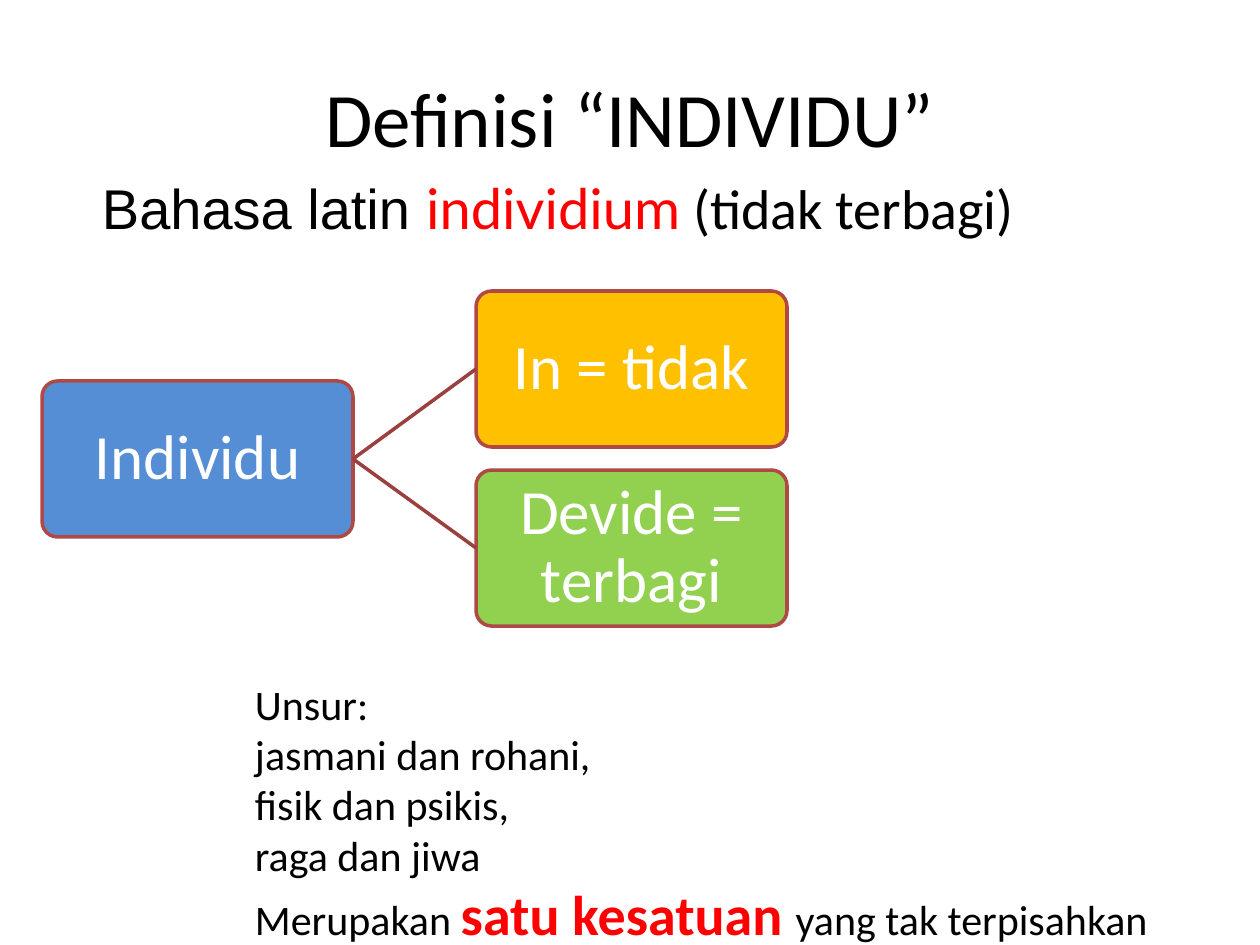
import pptx
import pptx.dml.color
import pptx.enum.shapes
import pptx.enum.text
import pptx.oxml
import pptx.util

SCALE = 914400 / 126
ALIGN = pptx.enum.text.PP_ALIGN
ANCHOR = pptx.enum.text.MSO_ANCHOR
BASE = {"name": "Calibri", "size": 24, "color": "000000", "bold": False}
LABEL = BASE | {"size": 36, "color": "FFFFFF"}
LEAD = BASE | {"size": 32}


def px(*sizes):
    """Turn pixel lengths into EMU."""
    return [pptx.util.Emu(round(size * SCALE)) for size in sizes]


def tint(code):
    """Turn a hex string into a colour."""
    return pptx.dml.color.RGBColor.from_string(code)


def set_all(target, values):
    """Set each attribute of the target from a dict."""
    for name, value in values.items():
        setattr(target, name, value)


def add_run(line, text, form):
    """Add one formatted run to a paragraph."""
    run = line.add_run()
    run.text = text
    set_all(run.font, {"name": form["name"], "size": pptx.util.Pt(form["size"]),
                       "bold": form["bold"]})
    run.font.color.rgb = tint(form["color"])


def fill_text(frame, lines, pads, anchor=ANCHOR.TOP, **style):
    """Write lines of runs into a text frame."""
    left, top, right, bottom = px(*pads)
    set_all(frame, {"word_wrap": True, "vertical_anchor": anchor,
                    "margin_left": left, "margin_top": top,
                    "margin_right": right, "margin_bottom": bottom})
    for index, runs in enumerate(lines):
        line = frame.add_paragraph() if index else frame.paragraphs[0]
        set_all(line, style)
        for text, form in runs:
            add_run(line, text, form)


def add_text(slide, place, lines, pads=(13, 6, 13, 6), **style):
    """Add a text box."""
    box = slide.shapes.add_textbox(*px(*place))
    fill_text(box.text_frame, lines, pads, **style)


def add_node(slide, left, top, text, color):
    """Add one rounded box of the tree."""
    kind = pptx.enum.shapes.MSO_SHAPE.ROUNDED_RECTANGLE
    node = slide.shapes.add_shape(kind, *px(left, top, 311, 156))
    node.adjustments[0] = 0.1
    node.shadow.inherit = False
    node.fill.solid()
    node.fill.fore_color.rgb = tint(color)
    node.line.color.rgb = tint("AE4946")
    node.line.width = pptx.util.Pt(2)
    fill_text(node.text_frame, [[(text, LABEL)]], (9, 9, 9, 9),
              anchor=ANCHOR.MIDDLE, alignment=ALIGN.CENTER, line_spacing=0.9)
    return node


def add_link(slide, root, leaf):
    """Join the right side of the root to the left side of a leaf."""
    kind = pptx.enum.shapes.MSO_CONNECTOR.STRAIGHT
    link = slide.shapes.add_connector(kind, 0, 0, 0, 0)
    link.begin_connect(root, 3)
    link.end_connect(leaf, 1)
    link.line.color.rgb = tint("9A403E")
    link.line.width = pptx.util.Pt(2)
    props = link._element.spPr
    props.append(pptx.oxml.parse_xml(
        '<a:effectLst xmlns:a="http://schemas.openxmlformats.org/drawingml/2006/main"/>'))


def main():
    """Build the slide and save it."""
    deck = pptx.Presentation()
    deck.slide_width, deck.slide_height = px(1260, 945)
    slide = deck.slides.add_slide(deck.slide_layouts[6])
    add_text(slide, (63, 38, 1134, 158),
             [[("Definisi “INDIVIDU”", BASE | {"size": 44})]],
             anchor=ANCHOR.MIDDLE, alignment=ALIGN.CENTER)
    add_text(slide, (73, 168, 1134, 116),
             [[("Bahasa latin ", LEAD | {"name": "Arial"}),
               ("individium", LEAD | {"name": "Lato", "color": "FF0000"}),
               (" (tidak terbagi)", LEAD)]],
             pads=(29, 6, 13, 6))
    root = add_node(slide, 42, 381, "Individu", "558ED5")
    leaves = [("In = tidak", "FFC000"), ("Devide = terbagi", "92D050")]
    for index, (text, color) in enumerate(leaves):
        leaf = add_node(slide, 476, 291 + 179 * index, text, color)
        add_link(slide, root, leaf)
    parts = ["Unsur:", "jasmani dan rohani,", "fisik dan psikis,", "raga dan jiwa"]
    whole = [("Merupakan ", BASE),
             ("satu kesatuan ", LEAD | {"color": "FF0000", "bold": True}),
             ("yang tak terpisahkan", BASE)]
    add_text(slide, (242, 672, 926, 285),
             [[(part, BASE)] for part in parts] + [whole])
    deck.save("out.pptx")


if __name__ == "__main__":
    main()
